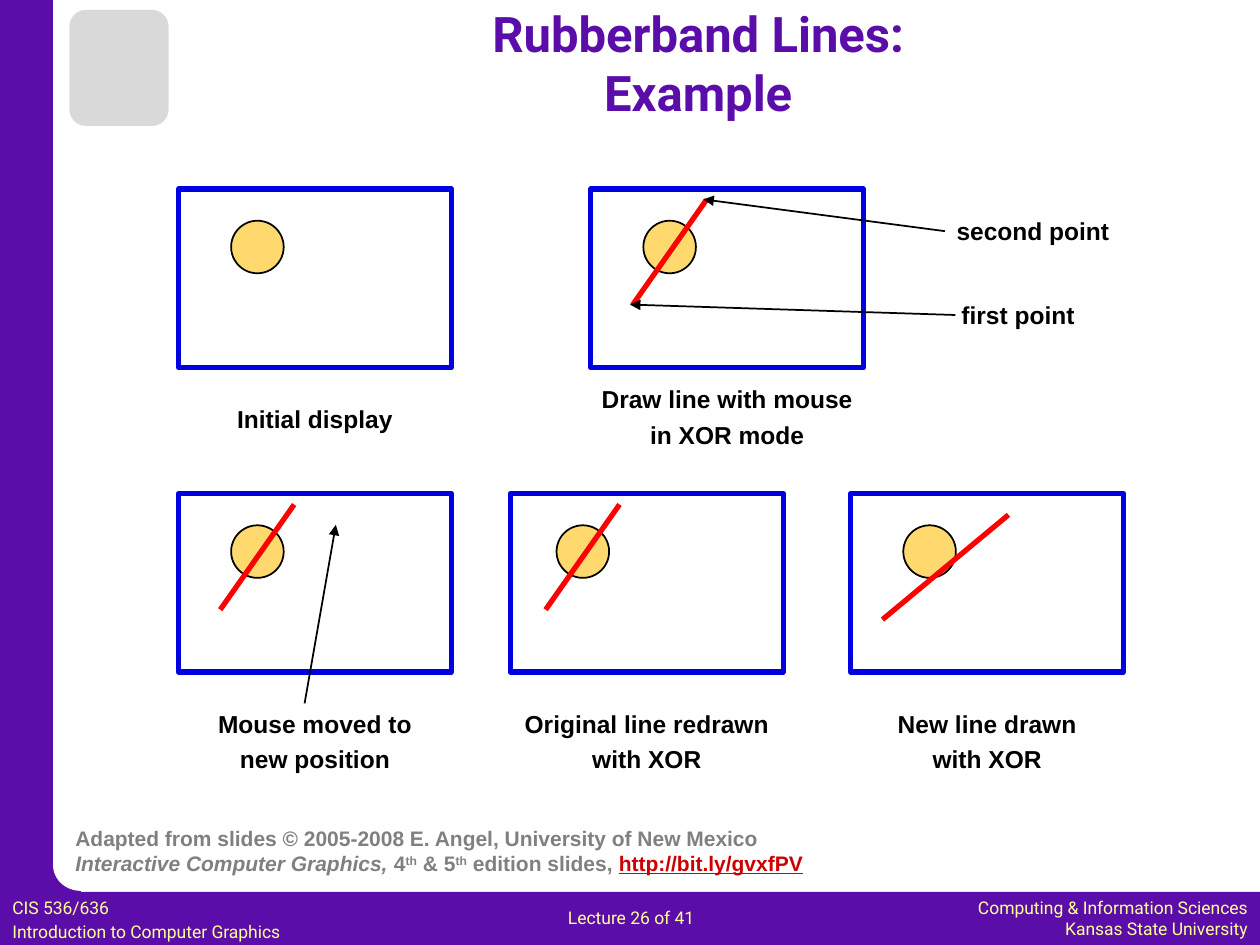
from lxml import etree
from pptx import Presentation
from pptx.dml.color import RGBColor
from pptx.enum.shapes import MSO_CONNECTOR, MSO_SHAPE as Shape
from pptx.enum.text import MSO_ANCHOR as Anchor, PP_ALIGN as Align
from pptx.oxml.ns import qn
from pptx.util import Cm, Pt

PURPLE = RGBColor(0x5B, 0x0D, 0xAA)
CREAM = RGBColor(0xFF, 0xFF, 0x99)
WHITE = RGBColor(0xFF, 0xFF, 0xFF)
BLACK = RGBColor(0x00, 0x00, 0x00)
GRAY = RGBColor(0x80, 0x80, 0x80)
LIGHT_GRAY = RGBColor(0xD9, 0xD9, 0xD9)
BLUE = RGBColor(0x00, 0x00, 0xE0)
GOLD = RGBColor(0xFF, 0xD9, 0x6D)
RED = RGBColor(0xFF, 0x00, 0x00)
LINK_RED = RGBColor(0xCC, 0x00, 0x00)

SLIDE_WIDTH, SLIDE_HEIGHT = 25.4, 19.05
PANEL_WIDTH, PANEL_HEIGHT = 5.5, 3.6
BALL = 1.06
TOP_ROW, BOTTOM_ROW = 3.81, 9.95

# Line ends, measured from the corner of the ball's box
FIRST_LINE = ((-0.22, 1.7), (1.27, -0.42))
NEW_LINE = ((-0.42, 1.9), (2.12, -0.21))


def add_block(slide, kind, box, fill, line=None, width=1):
    shape = slide.shapes.add_shape(kind, *map(Cm, box))
    shape.shadow.inherit = False
    shape.fill.solid()
    shape.fill.fore_color.rgb = fill
    if line is None:
        shape.line.fill.background()
    else:
        shape.line.color.rgb = line
        shape.line.width = Pt(width)
    return shape


def add_line(slide, start, end, color, width, arrow=False):
    line = slide.shapes.add_connector(
        MSO_CONNECTOR.STRAIGHT, *map(Cm, (*start, *end)))
    line.line.color.rgb = color
    line.line.width = Pt(width)
    if arrow:
        etree.SubElement(line.line._get_or_add_ln(), qn("a:tailEnd"), type="triangle")
    etree.SubElement(line._element.spPr, qn("a:effectLst"))


def add_text(slide, box, text, size, color, font="Arial", bold=False,
             align=Align.LEFT, gap=0, wrap=True, anchor=Anchor.TOP):
    frame = slide.shapes.add_textbox(*map(Cm, box)).text_frame
    frame.text = text
    frame.word_wrap = wrap
    frame.vertical_anchor = anchor
    for index, paragraph in enumerate(frame.paragraphs):
        paragraph.alignment = align
        if index:
            paragraph.space_before = Pt(gap)
        for run in paragraph.runs:
            format_run(run, size, color, font, bold)
    return frame


def format_run(run, size, color, font, bold):
    run.font.size = Pt(size)
    run.font.name = font
    run.font.bold = bold
    run.font.color.rgb = color


def add_label(slide, box, text):
    add_text(slide, box, text, 14, BLACK, bold=True, align=Align.CENTER,
             gap=3.4, wrap=False)


def add_border(slide):
    """Side bar, bottom band and the rounded corner between them."""
    bar = 1.07
    band_top = SLIDE_HEIGHT - bar
    add_block(slide, Shape.RECTANGLE, (0, band_top, SLIDE_WIDTH, bar), PURPLE)
    add_block(slide, Shape.RECTANGLE, (0, 0, bar, SLIDE_HEIGHT), PURPLE)
    add_block(slide, Shape.RECTANGLE, (0.51, 17.4, 1.12, 1.12), PURPLE)
    add_block(slide, Shape.OVAL, (bar, 16.92, 1.12, 1.04), WHITE)
    # Plain emblem in the corner
    add_block(slide, Shape.ROUNDED_RECTANGLE, (1.4, 0.2, 2, 2.34), LIGHT_GRAY)


def add_footer(slide, top):
    style = {"size": 10, "color": CREAM, "font": "Roboto"}
    add_text(slide, (0, top, 7.49, 1.12),
             "CIS 536/636\nIntroduction to Computer Graphics", gap=2, **style)
    add_text(slide, (11.2, top + 0.2, 3.86, 0.69), "Lecture 26 of 41", **style)
    add_text(slide, (18.24, top, 7.16, 1.09),
             "Computing & Information Sciences\nKansas State University",
             align=Align.RIGHT, **style)


def add_panel(slide, left, top, caption, caption_width, caption_drop=4.22,
              ball_left=1.06, line=None):
    """Framed display with a ball, an optional line and a caption below."""
    add_block(slide, Shape.RECTANGLE, (left, top, PANEL_WIDTH, PANEL_HEIGHT),
              WHITE, BLUE, 3)
    ball_x, ball_y = left + ball_left, top + 0.64
    add_block(slide, Shape.OVAL, (ball_x, ball_y, BALL, BALL), GOLD, BLACK)
    if line:
        start, end = [(ball_x + x, ball_y + y) for x, y in line]
        add_line(slide, start, end, RED, 3)
    height = 1.57 if "\n" in caption else 0.86
    caption_left = left + (PANEL_WIDTH - caption_width) / 2
    add_label(slide, (caption_left, top + caption_drop, caption_width, height),
              caption)


def add_callouts(slide):
    """Arrows to the line ends and to the new mouse position."""
    add_line(slide, (19.26, 6.35), (12.7, 6.14), BLACK, 1, arrow=True)
    add_label(slide, (19.13, 5.93, 2.79, 0.86), "first point")
    add_line(slide, (19.05, 4.66), (14.18, 4.02), BLACK, 1, arrow=True)
    add_label(slide, (19.02, 4.24, 3.61, 0.86), "second point")
    add_line(slide, (6.14, 14.18), (6.77, 10.58), BLACK, 1, arrow=True)


def add_source(slide, box):
    frame = add_text(
        slide, box,
        "Adapted from slides © 2005-2008 E. Angel, University of New Mexico",
        12, GRAY, bold=True)
    paragraph = frame.add_paragraph()
    pieces = ("Interactive Computer Graphics, ", "4", "th", " & 5", "th",
              " edition slides, ", "http://bit.ly/gvxfPV")
    for piece in pieces:
        run = paragraph.add_run()
        run.text = piece
        format_run(run, 12, GRAY, "Arial", True)
        if piece == "th":
            run._r.get_or_add_rPr().set("baseline", "30000")
    paragraph.runs[0].font.italic = True
    link = paragraph.runs[-1].font
    link.color.rgb = LINK_RED
    link.underline = True


def main():
    presentation = Presentation()
    presentation.slide_width = Cm(SLIDE_WIDTH)
    presentation.slide_height = Cm(SLIDE_HEIGHT)
    slide = presentation.slides.add_slide(presentation.slide_layouts[6])

    add_border(slide)
    add_footer(slide, 17.95)
    add_text(slide, (3.18, 0.2, 21.79, 2.11), "Rubberband Lines:\nExample", 28,
             PURPLE, "Roboto", True, Align.CENTER, anchor=Anchor.MIDDLE)

    # Top row
    add_panel(slide, 3.6, TOP_ROW, "Initial display", 3.71)
    add_panel(slide, 11.91, TOP_ROW, "Draw line with mouse\nin XOR mode", 5.59,
              caption_drop=3.81, line=FIRST_LINE)
    # Bottom row
    add_panel(slide, 3.6, BOTTOM_ROW, "Mouse moved to\nnew position", 4.42,
              line=FIRST_LINE)
    add_panel(slide, 10.29, BOTTOM_ROW, "Original line redrawn\nwith XOR", 5.59,
              ball_left=0.93, line=FIRST_LINE)
    add_panel(slide, 17.15, BOTTOM_ROW, "New line drawn\nwith XOR", 4.14,
              line=NEW_LINE)

    add_callouts(slide)
    add_source(slide, (1.27, 16.51, 15.42, 1.27))
    presentation.save("out.pptx")


if __name__ == "__main__":
    main()
